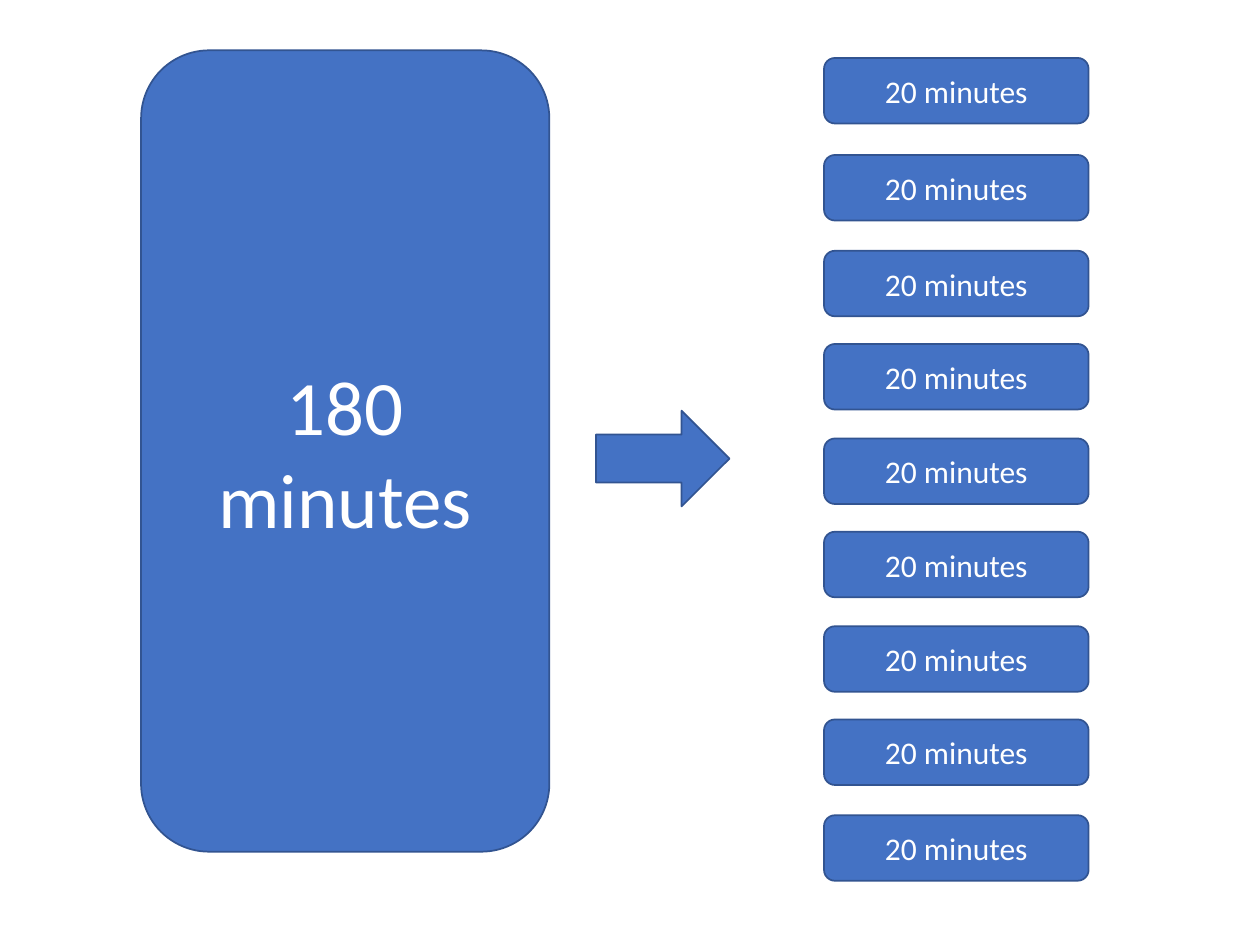
from pptx import Presentation
from pptx.dml.color import RGBColor
from pptx.enum.shapes import MSO_SHAPE as Shape
from pptx.enum.text import MSO_ANCHOR as Anchor, PP_ALIGN as Align
from pptx.util import Inches, Pt

# Content: the whole session and the parts it is split into
WHOLE = "180 minutes"
PART = "20 minutes"
PART_TOPS = [0.46, 1.23, 1.99, 2.73, 3.48, 4.22, 4.97, 5.71, 6.47]

# Style
FILL, OUTLINE, TEXT = "4472C4", "325491", "FFFFFF"
FONT = "Calibri"


def color(value):
    return RGBColor.from_string(value)


def add_block(page, kind, place, text="", size=18):
    box = page.shapes.add_shape(kind, *map(Inches, place))
    box.shadow.inherit = False
    box.fill.solid()
    box.fill.fore_color.rgb = color(FILL)
    box.line.color.rgb = color(OUTLINE)
    box.line.width = Pt(1)
    if text:
        frame = box.text_frame
        frame.word_wrap = True
        frame.vertical_anchor = Anchor.MIDDLE
        para = frame.paragraphs[0]
        para.alignment = Align.CENTER
        span = para.add_run()
        span.text = text
        for name, value in {"name": FONT, "size": Pt(size)}.items():
            setattr(span.font, name, value)
        span.font.color.rgb = color(TEXT)


def main():
    deck = Presentation()
    deck.slide_width, deck.slide_height = Inches(10), Inches(7.5)
    page = deck.slides.add_slide(deck.slide_layouts[6])

    # Whole session and arrow
    add_block(page, Shape.ROUNDED_RECTANGLE, (1.12, 0.4, 3.24, 6.36), WHOLE, 44)
    add_block(page, Shape.RIGHT_ARROW, (4.73, 3.26, 1.06, 0.76))

    # Column of short parts
    for top in PART_TOPS:
        add_block(page, Shape.ROUNDED_RECTANGLE, (6.54, top, 2.1, 0.52), PART)

    deck.save("out.pptx")


if __name__ == "__main__":
    main()
